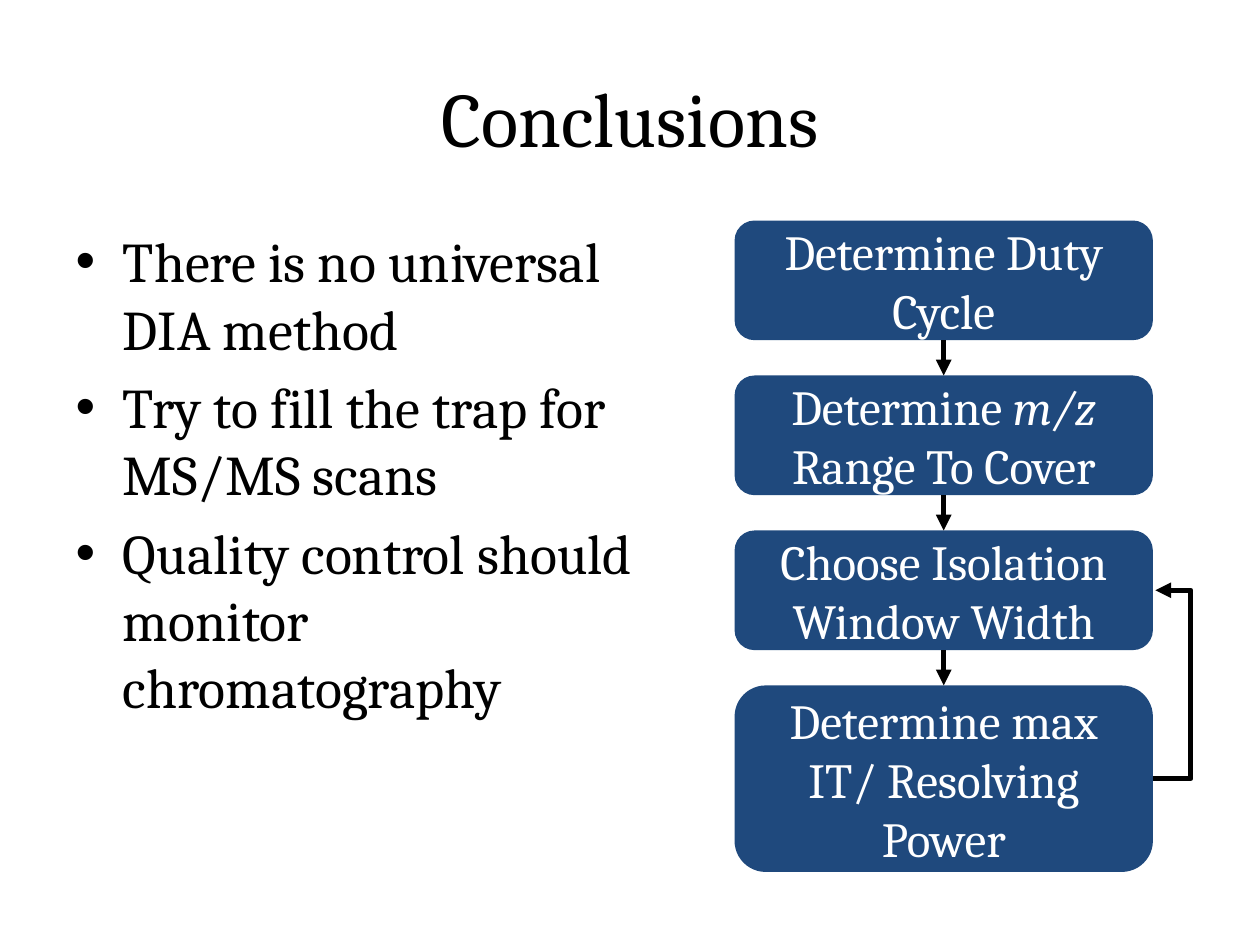
from lxml import etree
from pptx import Presentation
from pptx.dml.color import RGBColor
from pptx.enum import shapes, text
from pptx.oxml import ns
from pptx.util import Inches, Pt

COLORS = {"box": "1F497D", "ink": "000000", "paper": "FFFFFF"}
FONT = "Cambria"
BULLETS = [
    "There is no universal DIA method",
    "Try to fill the trap for MS/MS scans",
    "Quality control should monitor chromatography",
]
STEPS = [
    [("Determine Duty Cycle", False)],
    [("Determine ", False), ("m/z", True), (" Range To Cover", False)],
    [("Choose Isolation Window Width", False)],
    [("Determine max IT/ Resolving Power", False)],
]


def rgb(name):
    return RGBColor.from_string(COLORS[name])


def place(sp, box):
    sp.left, sp.top, sp.width, sp.height = map(Inches, box)


def style(p, size, color):
    p.font.name = FONT
    p.font.size = Pt(size)
    p.font.color.rgb = rgb(color)


def add_title(s, box, title):
    sp = s.shapes.title
    place(sp, box)
    tf = sp.text_frame
    tf.text = title
    tf.vertical_anchor = text.MSO_ANCHOR.MIDDLE
    style(tf.paragraphs[0], 44, "ink")


def add_bullets(s, box, items):
    sp = s.placeholders[1]
    place(sp, box)
    tf = sp.text_frame
    tf.text = "\n".join(items)
    for p in tf.paragraphs:
        style(p, 32, "ink")


def add_step(s, box, runs):
    sp = s.shapes.add_shape(shapes.MSO_SHAPE.ROUNDED_RECTANGLE, *map(Inches, box))
    sp.shadow.inherit = False
    sp.fill.solid()
    sp.fill.fore_color.rgb = rgb("box")
    sp.line.fill.background()
    tf = sp.text_frame
    tf.word_wrap = True
    tf.vertical_anchor = text.MSO_ANCHOR.MIDDLE
    p = tf.paragraphs[0]
    p.alignment = text.PP_ALIGN.CENTER
    style(p, 28, "paper")
    for words, italic in runs:
        r = p.add_run()
        r.text = words
        if italic:
            r.font.italic = True
    return sp


def add_arrow(s, kind, start, end):
    line = s.shapes.add_connector(kind, *start, *end)
    line.line.color.rgb = rgb("ink")
    line.line.width = Pt(3)
    etree.SubElement(line.line._get_or_add_ln(), ns.qn("a:tailEnd"), type="triangle")
    etree.SubElement(line._element.spPr, ns.qn("a:effectLst"))
    return line


def add_flow(s, box, steps):
    left, top, width, height = box
    row, gap = 0.95, 0.28
    pitch = row + gap
    boxes = []
    for i, runs in enumerate(steps):
        y = i * pitch
        h = row if i < len(steps) - 1 else height - y
        boxes.append(add_step(s, (left, top + y, width, h), runs))

    for upper, lower in zip(boxes, boxes[1:]):
        x = upper.left + upper.width // 2
        add_arrow(s, shapes.MSO_CONNECTOR.STRAIGHT,
                  (x, upper.top + upper.height), (x, lower.top))

    target, source = boxes[-2:]
    right = source.left + source.width
    inset, reach = Inches(0.02), Inches(0.3)
    loop = add_arrow(s, shapes.MSO_CONNECTOR.ELBOW,
                     (right, source.top + source.height // 2),
                     (right + inset, target.top + target.height // 2))
    guides = loop._element.spPr.prstGeom.get_or_add_avLst()
    etree.SubElement(guides, ns.qn("a:gd"), name="adj1",
                     fmla=f"val {round(100000 * reach / inset)}")


def main():
    prs = Presentation()
    prs.slide_width, prs.slide_height = Inches(10), Inches(7.5)
    s = prs.slides.add_slide(prs.slide_layouts[1])
    add_title(s, (0.5, 0.3, 9, 1.25), "Conclusions")
    add_bullets(s, (0.5, 1.75, 4.83, 4.95), BULLETS)
    add_flow(s, (5.83, 1.75, 3.32, 5.17), STEPS)
    prs.save("out.pptx")


if __name__ == "__main__":
    main()
